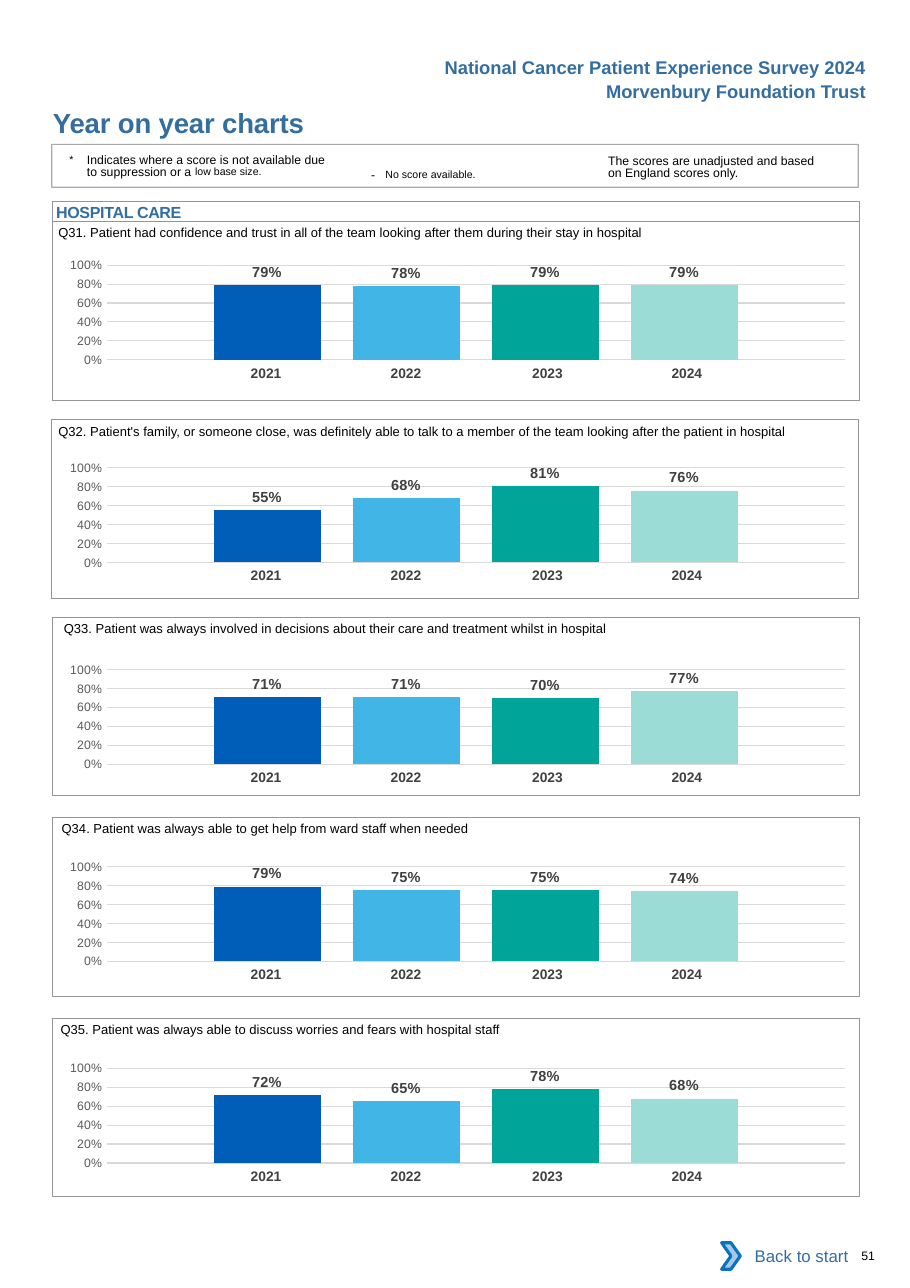
import dataclasses
import pptx
import pptx.chart.data
import pptx.dml.color
import pptx.enum.chart
import pptx.enum.shapes
import pptx.enum.text
import pptx.oxml
import pptx.oxml.ns
import pptx.util

# Content
HEADINGS = [("National Cancer Patient Experience Survey 2024", 392, 46, 404),
            ("Morvenbury Foundation Trust", 539, 68, 257)]
TITLE = "Year on year charts"
SECTION = "HOSPITAL CARE"
BACK_LINK = "Back to start"
PAGE_NUMBER = "51"
YEARS = ["2021", "2022", "2023", "2024"]

# Question, scores by year, panel left and top, question left, chart top
QUESTIONS = [
    ("Q31. Patient had confidence and trust in all of the team looking after them "
     "during their stay in hospital", (0.79, 0.78, 0.79, 0.79), 48, 201, 53, 222),
    ("Q32. Patient's family, or someone close, was definitely able to talk to a member "
     "of the team looking after the patient in hospital",
     (0.55, 0.68, 0.81, 0.76), 47, 381, 53, 406),
    ("Q33. Patient was always involved in decisions about their care and treatment "
     "whilst in hospital", (0.71, 0.71, 0.70, 0.77), 48, 560, 58, 589),
    ("Q34. Patient was always able to get help from ward staff when needed",
     (0.79, 0.75, 0.75, 0.74), 48, 742, 56, 768),
    ("Q35. Patient was always able to discuss worries and fears with hospital staff",
     (0.72, 0.65, 0.78, 0.68), 48, 924, 55, 951),
]

# Notes: runs of (text, size, baseline shift in percent), box, insets, hang, line height
NOTES = [
    ([("*", 12, 3), ("\tIndicates where a score is not available due to suppression or a ", 8, 0),
      ("low base size.", 12, 7)], (63, 138, 240, 28), (0, 3, 0, 0), 16, 8.1),
    ([("-", 8, 0), ("\tNo score available.", 12, 3)],
     (327, 141, 183, 24), (10, 5, 10, 5), 13, None),
    ([("The scores are unadjusted and based on England scores only.", 8, 0)],
     (552, 138, 198, 27), (0, 3, 0, 0), 0, 8.1),
]


@dataclasses.dataclass(frozen=True)
class Theme:
    font: str = "Arial"
    chart_font: str = "Calibri"
    blue: str = "336E9F"
    black: str = "000000"
    white: str = "FFFFFF"
    border: str = "939598"
    year: str = "414042"
    score: str = "404040"
    axis: str = "595959"
    grid: str = "D9D9D9"
    arrow_fill: str = "A8C7E9"
    arrow_line: str = "0A74BB"
    bars: tuple = ("005EB8", "41B6E6", "00A499", "9CDCD7")
    title_size: float = 18
    heading_size: float = 12
    link_size: float = 11
    section_size: float = 10.5
    chart_size: float = 10
    score_size: float = 9.5
    year_size: float = 9
    question_size: float = 8.5
    small_size: float = 8


THEME = Theme()
ALIGN = pptx.enum.text.PP_ALIGN
ANCHOR = pptx.enum.text.MSO_ANCHOR
SHAPE = pptx.enum.shapes.MSO_SHAPE
Pt = pptx.util.Pt
PANEL_WIDTH, PANEL_HEIGHT = 732, 162
QUESTION_RISE = 6
CHART_LEFT, CHART_HEIGHT = 39, 129
YEARS_LEFT, YEARS_DROP, YEARS_HEIGHT = 173, 105, 27
YEAR_COLUMNS = [(127, 0), (127, 0), (134, 4), (127, 12)]  # width, right inset
PLOT_AREA = {"x": 0.079, "y": 0.145, "w": 0.915, "h": 0.666}
NO_GRID_STYLE = "{2D5ABB26-0587-4C30-8999-92F81FD0307C}"


def px(*lengths):
    return [pptx.util.Emu(length * 9144) for length in lengths]


def rgb(code):
    return pptx.dml.color.RGBColor.from_string(code)


def style(font, size, color, bold=False, name=THEME.font):
    font.name, font.size, font.bold = name, Pt(size), bold
    font.color.rgb = rgb(color)


def write(shape, text, size, color, bold=False, align=ALIGN.LEFT,
          insets=(0, 0, 0, 0), anchor=ANCHOR.TOP, spacing=0):
    frame = shape.text_frame
    frame.word_wrap, frame.vertical_anchor = True, anchor
    (frame.margin_left, frame.margin_top,
     frame.margin_right, frame.margin_bottom) = px(*insets)
    frame.text = text
    frame.paragraphs[0].alignment = align
    for run in frame.paragraphs[0].runs:
        style(run.font, size, color, bold)
        if spacing:
            run.font._element.set("spc", str(spacing))
    return frame.paragraphs[0]


def outline(slide, kind, box, line=None, width=0.5, fill=None):
    shape = slide.shapes.add_shape(kind, *px(*box))
    shape.shadow.inherit = False
    if fill:
        shape.fill.solid()
        shape.fill.fore_color.rgb = rgb(fill)
    else:
        shape.fill.background()
    if line:
        shape.line.color.rgb, shape.line.width = rgb(line), Pt(width)
    else:
        shape.line.fill.background()
    return shape


def add_scores(slide, scores, top):
    data = pptx.chart.data.CategoryChartData(number_format="0%")
    data.categories = ["1"]
    for number, score in enumerate(scores, 1):
        data.add_series(f"Series {number}", [score])
    chart = slide.shapes.add_chart(
        pptx.enum.chart.XL_CHART_TYPE.COLUMN_CLUSTERED,
        *px(CHART_LEFT, top, PANEL_WIDTH, CHART_HEIGHT), data).chart
    chart.has_title = chart.has_legend = False
    style(chart.font, THEME.chart_size, THEME.black, name=THEME.chart_font)
    chart.category_axis.visible = False

    axis = chart.value_axis
    axis.minimum_scale, axis.maximum_scale, axis.major_unit = 0, 1, 0.2
    axis.major_tick_mark = axis.minor_tick_mark = pptx.enum.chart.XL_TICK_MARK.NONE
    axis.format.line.fill.background()
    axis.major_gridlines.format.line.color.rgb = rgb(THEME.grid)
    axis.major_gridlines.format.line.width = Pt(0.75)
    axis.tick_labels.number_format, axis.tick_labels.number_format_is_linked = "0%", False
    style(axis.tick_labels.font, THEME.small_size, THEME.axis)

    plot = chart.plots[0]
    plot.gap_width, plot.overlap, plot.vary_by_categories = 200, -30, False
    for series, color in zip(plot.series, THEME.bars):
        series.format.fill.solid()
        series.format.fill.fore_color.rgb = rgb(color)
        labels = series.data_labels
        labels.show_value = True
        labels.position = pptx.enum.chart.XL_LABEL_POSITION.OUTSIDE_END
        labels.number_format, labels.number_format_is_linked = "0%", False
        style(labels.font, THEME.score_size, THEME.score, True)

    # Fixed inner plot area
    parts = "".join(f'<c:{key}Mode val="edge"/>' for key in "xy") + "".join(
        f'<c:{key} val="{value}"/>' for key, value in PLOT_AREA.items())
    area = chart._chartSpace.chart.plotArea
    for old in area.findall(pptx.oxml.ns.qn("c:layout")):
        area.remove(old)
    area.insert(0, pptx.oxml.parse_xml(
        f'<c:layout {pptx.oxml.ns.nsdecls("c")}><c:manualLayout>'
        f'<c:layoutTarget val="inner"/>{parts}</c:manualLayout></c:layout>'))


def add_years(slide, top):
    width = sum(column for column, inset in YEAR_COLUMNS)
    table = slide.shapes.add_table(
        1, len(YEARS), *px(YEARS_LEFT, top, width, YEARS_HEIGHT)).table
    table.first_row = table.horz_banding = False
    table._tbl.tblPr.find(pptx.oxml.ns.qn("a:tableStyleId")).text = NO_GRID_STYLE
    for index, (year, (column, inset)) in enumerate(zip(YEARS, YEAR_COLUMNS)):
        table.columns[index].width = px(column)[0]
        cell = table.cell(0, index)
        cell.fill.background()
        (cell.margin_left, cell.margin_top,
         cell.margin_right, cell.margin_bottom) = px(10, 5, inset, 5)
        cell.text = year
        paragraph = cell.text_frame.paragraphs[0]
        paragraph.alignment = ALIGN.CENTER
        style(paragraph.runs[0].font, THEME.year_size, THEME.year, True)


def add_note(slide, runs, box, insets, hang, line_height):
    note = slide.shapes.add_textbox(*px(*box))
    paragraph = write(note, "", THEME.small_size, THEME.black, insets=insets)
    if line_height:
        paragraph.line_spacing = Pt(line_height)
    if hang:
        indent = px(hang)[0]
        paragraph._p.get_or_add_pPr().set("marL", str(indent))
        paragraph._p.get_or_add_pPr().set("indent", str(-indent))
    for text, size, shift in runs:
        run = paragraph.add_run()
        run.text = text
        style(run.font, size, THEME.black)
        if shift:
            run.font._element.set("baseline", str(shift * 1000))


def main():
    deck = pptx.Presentation()
    deck.slide_width, deck.slide_height = px(826, 1169)
    slide = deck.slides.add_slide(deck.slide_layouts[5])

    # Title and headings
    title = slide.shapes.title
    title.left, title.top, title.width, title.height = px(48, 96, 449, 30)
    write(title, TITLE, THEME.title_size, THEME.blue, True, spacing=-10)
    for text, left, top, width in HEADINGS:
        write(slide.shapes.add_textbox(*px(left, top, width, 30)), text,
              THEME.heading_size, THEME.blue, True, ALIGN.RIGHT, (0, 5, 10, 5))

    # Notes
    legend = outline(slide, SHAPE.RECTANGLE, (47, 131, 732, 39), THEME.border, 0.75)
    color = legend.line._ln.find(".//" + pptx.oxml.ns.qn("a:srgbClr"))
    color.append(pptx.oxml.parse_xml(
        f'<a:alpha {pptx.oxml.ns.nsdecls("a")} val="80000"/>'))
    for note in NOTES:
        add_note(slide, *note)

    # Section and question panels
    section = outline(slide, SHAPE.RECTANGLE, (48, 183, 732, 18), THEME.border)
    write(section, SECTION, THEME.section_size, THEME.blue, True,
          insets=(3, 1, 0, 0), spacing=-20)
    for question, scores, left, top, text_left, chart_top in QUESTIONS:
        outline(slide, SHAPE.RECTANGLE, (left, top, PANEL_WIDTH, PANEL_HEIGHT), THEME.border)
        add_scores(slide, scores, chart_top)
        add_years(slide, chart_top + YEARS_DROP)
        heading = slide.shapes.add_textbox(*px(text_left, top - QUESTION_RISE, 720, 24))
        write(heading, question, THEME.question_size, THEME.black, insets=(0, 9, 0, 0))

    # Footer
    link = outline(slide, SHAPE.RECTANGLE, (662, 1119, 118, 42), fill=THEME.white)
    write(link, BACK_LINK, THEME.link_size, THEME.blue, align=ALIGN.RIGHT,
          insets=(10, 5, 10, 5), anchor=ANCHOR.MIDDLE)
    outline(slide, SHAPE.CHEVRON, (655, 1128, 17, 24), THEME.arrow_line, 2, THEME.arrow_fill)
    page = slide.shapes.add_textbox(*px(772, 1133, 51, 13))
    write(page, PAGE_NUMBER, THEME.small_size, THEME.black, insets=(10, 0, 0, 0))

    deck.save("out.pptx")


if __name__ == "__main__":
    main()
